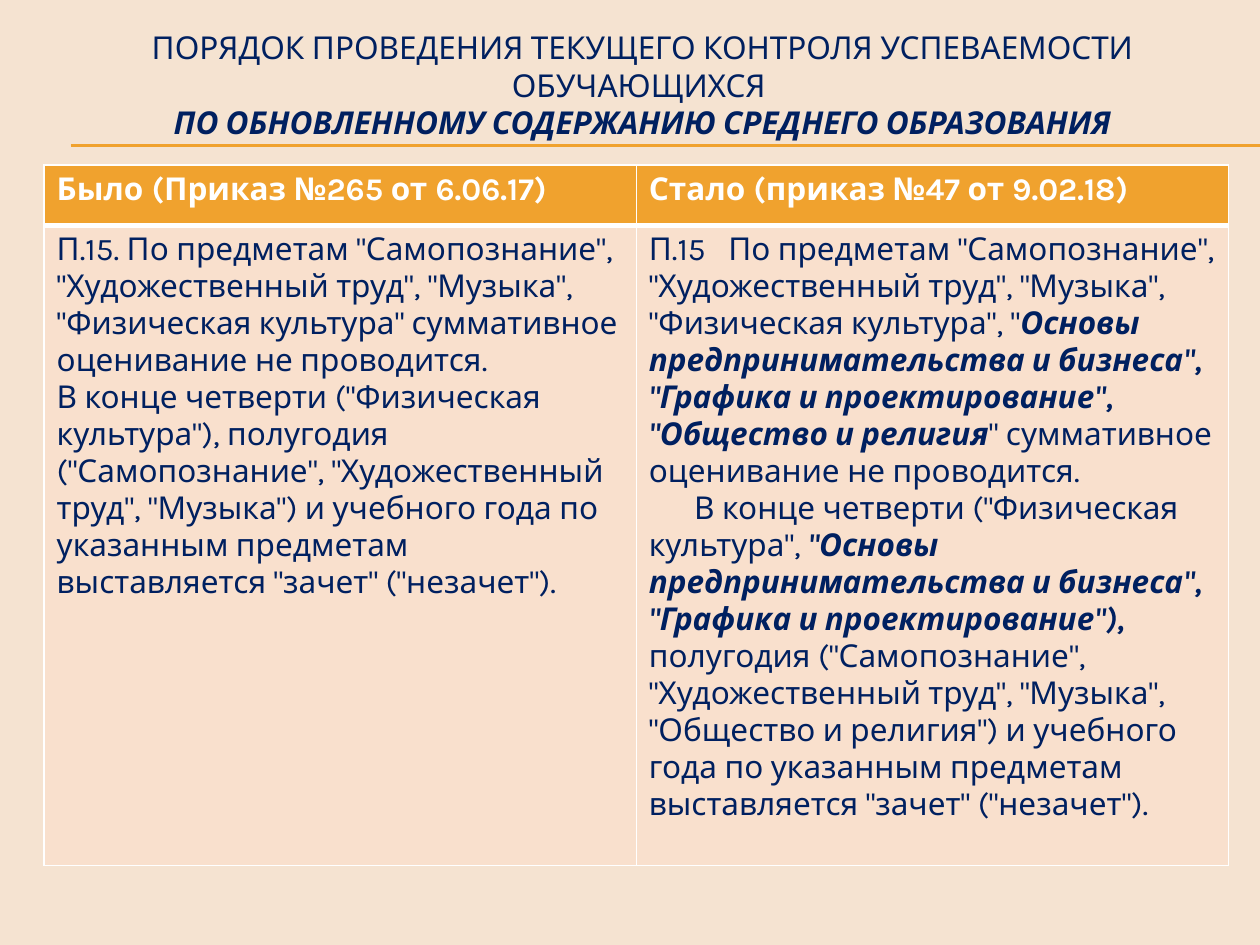
from dataclasses import dataclass

import lxml.etree
import pptx
import pptx.dml.color
import pptx.enum.shapes
import pptx.enum.text
import pptx.oxml.ns
import pptx.util

Inches = pptx.util.Inches
RGBColor = pptx.dml.color.RGBColor
qualified = pptx.oxml.ns.qn

SAND = RGBColor(0xF5, 0xE3, 0xD1)
ORANGE = RGBColor(0xF0, 0xA2, 0x2E)
PEACH = RGBColor(0xF9, 0xE0, 0xCD)
NAVY = RGBColor(0x00, 0x20, 0x60)
WHITE = RGBColor(0xFF, 0xFF, 0xFF)

PLAIN = {"name": "Karla", "size": pptx.util.Pt(18), "bold": False, "italic": False}
HEADING = PLAIN | {"bold": True}
STRONG = PLAIN | {"bold": True, "italic": True}


@dataclass(frozen=True)
class Span:
    text: str
    style: dict


@dataclass(frozen=True)
class Paragraph:
    spans: list[Span]
    indent: float = 0
    tab: float = 0


@dataclass(frozen=True)
class Row:
    cells: list[list[Paragraph]]
    height: float
    fill: RGBColor
    color: RGBColor
    bottom: float


TITLE = Paragraph([
    Span("ПОРЯДОК ПРОВЕДЕНИЯ ТЕКУЩЕГО КОНТРОЛЯ УСПЕВАЕМОСТИ ОБУЧАЮЩИХСЯ \n", PLAIN),
    Span("ПО ОБНОВЛЕННОМУ СОДЕРЖАНИЮ СРЕДНЕГО ОБРАЗОВАНИЯ", STRONG),
])

BEFORE = [
    Paragraph([Span('П.15. По предметам "Самопознание", "Художественный труд", "Музыка", '
                    '"Физическая культура" суммативное оценивание не проводится.', PLAIN)]),
    Paragraph([Span('В конце четверти ("Физическая культура"), полугодия ("Самопознание", '
                    '"Художественный труд", "Музыка") и учебного года по указанным предметам '
                    'выставляется "зачет" ("незачет").', PLAIN)]),
]
AFTER = [
    Paragraph([
        Span('П.15\tПо предметам "Самопознание", "Художественный труд", "Музыка", '
             '"Физическая культура", "', PLAIN),
        Span('Основы предпринимательства и бизнеса", "Графика и проектирование", '
             '"Общество и религия', STRONG),
        Span('" суммативное оценивание не проводится.', PLAIN),
    ], tab=0.63),
    Paragraph([
        Span('В конце четверти ("Физическая культура", ', PLAIN),
        Span('"Основы предпринимательства и бизнеса", "Графика и проектирование"), ', STRONG),
        Span('полугодия ("Самопознание", "Художественный труд", "Музыка", "Общество и религия") '
             'и учебного года по указанным предметам выставляется "зачет" ("незачет").', PLAIN),
    ], indent=0.36),
]
ROWS = [
    Row([[Paragraph([Span("Было (Приказ №265 от 6.06.17)", HEADING)])],
         [Paragraph([Span("Стало (приказ №47 от 9.02.18)", HEADING)])]],
        0.48, ORANGE, WHITE, 3),
    Row([BEFORE, AFTER], 5.08, PEACH, NAVY, 1),
]


def write_paragraph(para, content: Paragraph, color: RGBColor) -> None:
    """Fill a paragraph with styled spans, its first-line indent and its tab stop."""
    properties = para._p.get_or_add_pPr()
    if content.indent:
        properties.set("indent", str(Inches(content.indent)))
    if content.tab:
        stops = lxml.etree.SubElement(properties, qualified("a:tabLst"))
        lxml.etree.SubElement(stops, qualified("a:tab"), pos=str(Inches(content.tab)), algn="l")
    for part in content.spans:
        span = para.add_run()
        span.text = part.text.rstrip("\n")
        for attribute, value in part.style.items():
            setattr(span.font, attribute, value)
        span.font.color.rgb = color
        if part.text.endswith("\n"):
            para.add_line_break()


def draw_title(page) -> None:
    """Place the centred title."""
    box = page.shapes.add_textbox(Inches(0.35), Inches(0.21), Inches(9.5), Inches(0.92))
    frame = box.text_frame
    frame.word_wrap = True
    frame.vertical_anchor = pptx.enum.text.MSO_ANCHOR.MIDDLE
    para = frame.paragraphs[0]
    para.alignment = pptx.enum.text.PP_ALIGN.CENTER
    write_paragraph(para, TITLE, NAVY)


def draw_rule(page, top: float) -> None:
    """Draw a thin rule that runs to the right edge."""
    rule = page.shapes.add_connector(pptx.enum.shapes.MSO_CONNECTOR.STRAIGHT,
                                     Inches(0.56), Inches(top), Inches(10), Inches(top))
    rule.line.color.rgb = ORANGE
    rule.line.width = pptx.util.Pt(0.75)
    lxml.etree.SubElement(rule._element.spPr, qualified("a:effectLst"))


def draw_borders(cell, widths: dict[str, float]) -> None:
    """Give each side of a cell a white border."""
    properties = cell._tc.get_or_add_tcPr()
    for position, (side, width) in enumerate(widths.items()):
        line = lxml.etree.Element(qualified(f"a:{side}"), w=str(pptx.util.Pt(width)))
        fill = lxml.etree.SubElement(line, qualified("a:solidFill"))
        lxml.etree.SubElement(fill, qualified("a:srgbClr"), val=str(WHITE))
        properties.insert(position, line)


def draw_table(page, rows: list[Row]) -> None:
    """Draw the comparison table."""
    height = sum(row.height for row in rows)
    table = page.shapes.add_table(len(rows), 2, Inches(0.35), Inches(1.31),
                                  Inches(9.4), Inches(height)).table
    top = 1
    for index, row in enumerate(rows):
        table.rows[index].height = Inches(row.height)
        for cell, paragraphs in zip(table.rows[index].cells, row.cells):
            cell.fill.solid()
            cell.fill.fore_color.rgb = row.fill
            draw_borders(cell, {"lnL": 1, "lnR": 1, "lnT": top, "lnB": row.bottom})
            frame = cell.text_frame
            for number, content in enumerate(paragraphs):
                para = frame.add_paragraph() if number else frame.paragraphs[0]
                write_paragraph(para, content, row.color)
        top = row.bottom


def main() -> None:
    """Build and save the slide."""
    deck = pptx.Presentation()
    deck.slide_width, deck.slide_height = Inches(10), Inches(7.5)
    page = deck.slides.add_slide(deck.slide_layouts[6])
    page.background.fill.solid()
    page.background.fill.fore_color.rgb = SAND
    for top in (1.15, 1.16):
        draw_rule(page, top)
    draw_title(page)
    draw_table(page, ROWS)
    deck.save("out.pptx")


if __name__ == "__main__":
    main()
